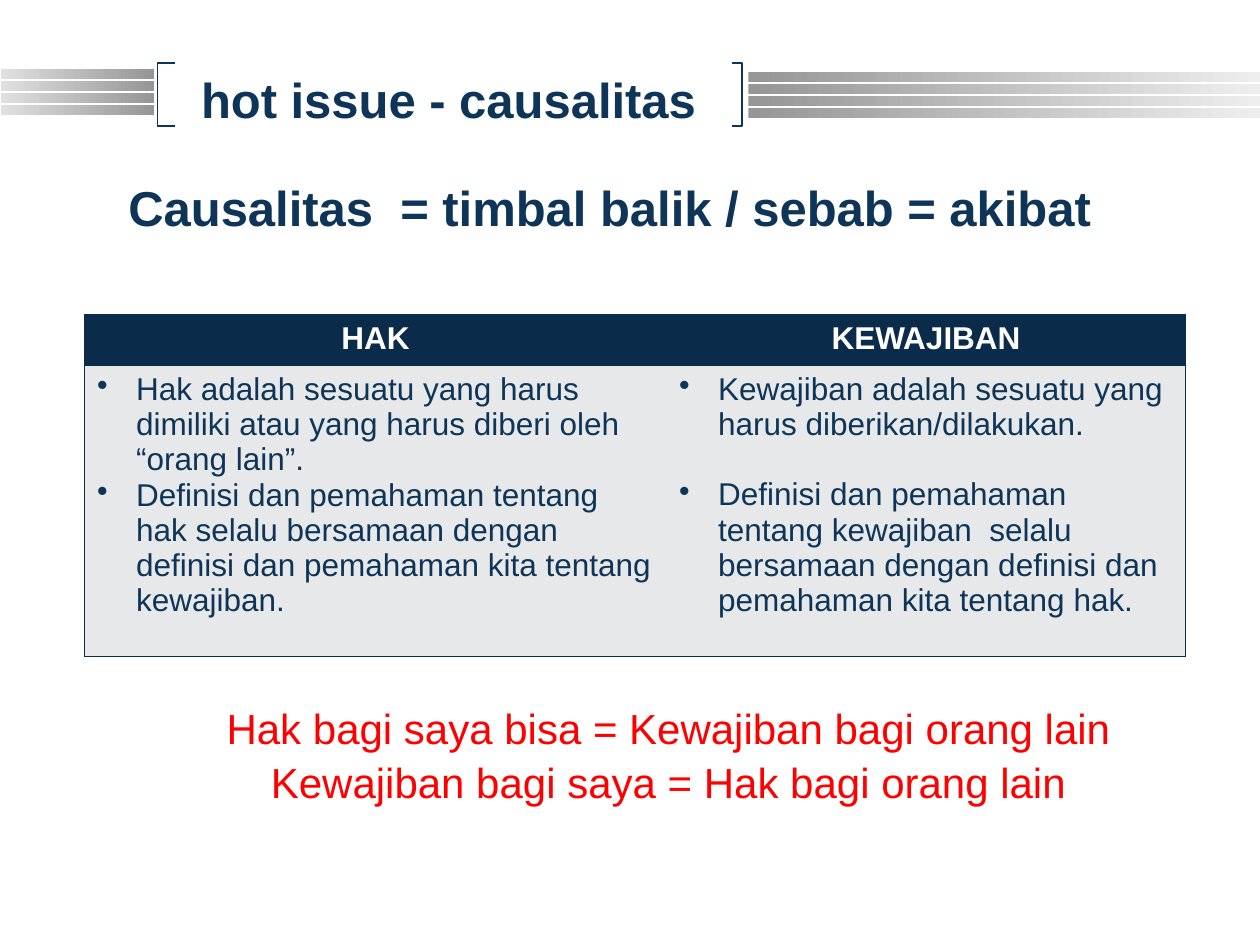
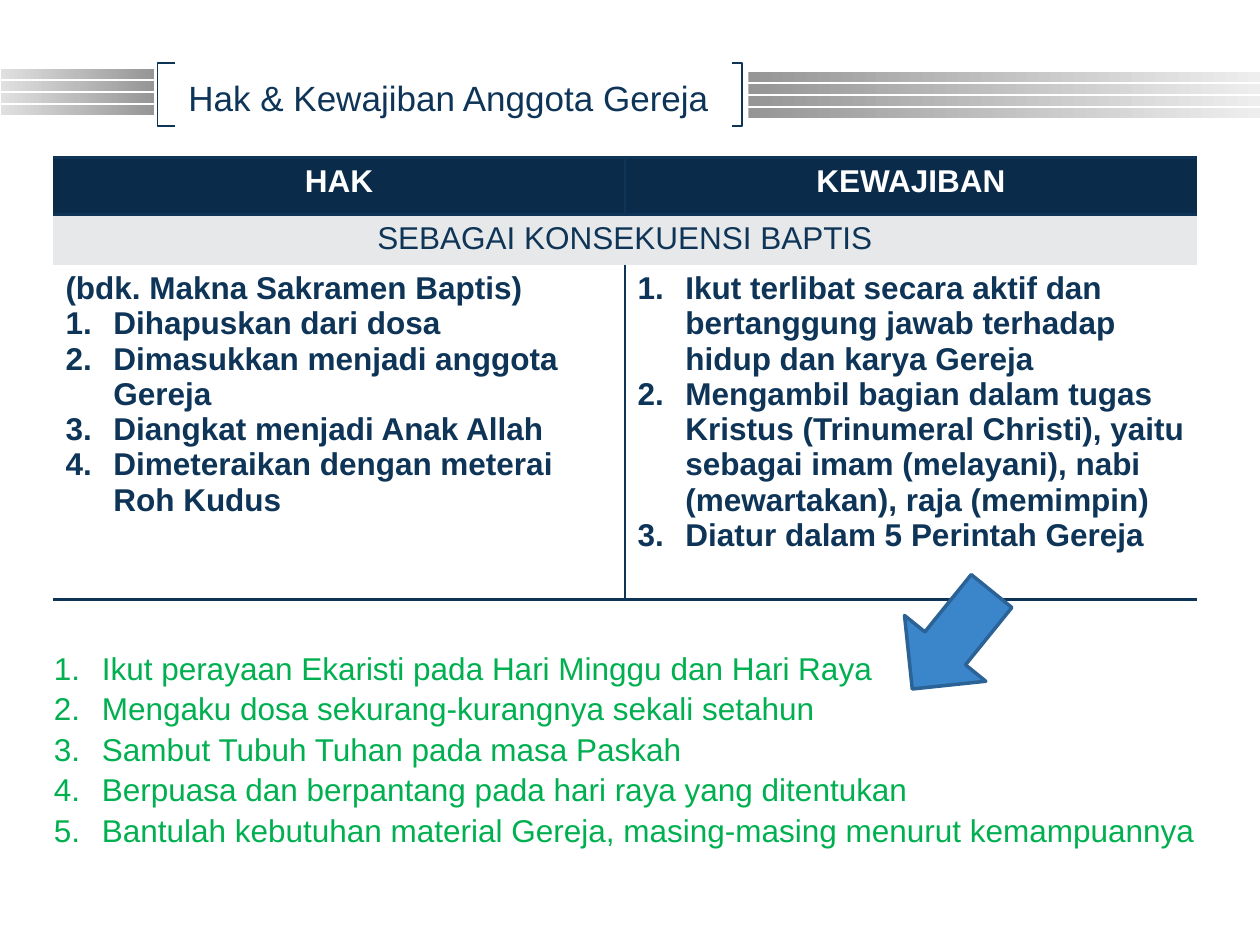
from dataclasses import dataclass

from lxml import etree
from pptx import Presentation
from pptx.dml.color import RGBColor
from pptx.enum.shapes import MSO_SHAPE
from pptx.enum.text import MSO_ANCHOR, PP_ALIGN
from pptx.oxml.ns import qn
from pptx.slide import Slide
from pptx.util import Inches, Pt

RECT, ARROW = MSO_SHAPE.RECTANGLE, MSO_SHAPE.DOWN_ARROW
LEFT, CENTER = PP_ALIGN.LEFT, PP_ALIGN.CENTER
TOP, MIDDLE = MSO_ANCHOR.TOP, MSO_ANCHOR.MIDDLE
NAVY, DARK, PALE, WHITE = "0E3558", "0A2C4A", "E7E8E9", "FFFFFF"
RED, GREEN, BLUE, EDGE = "FF0000", "00B050", "3B86CB", "2C6396"
SILVER, GREY, MIST = "E0E0E0", "969696", "EEEEEE"
DOT, NUMBER = "buChar", "buAutoNum"
MARKS = {DOT: ("char", "•", 0.31), NUMBER: ("type", "arabicPeriod", 0.38)}
LEADING = 1.07


@dataclass
class Band:
    """A stack of four fading stripes."""
    left: float
    top: float
    width: float
    start: str
    end: str


@dataclass
class Line:
    """One paragraph of text."""
    text: str
    mark: str = ""
    before: float = 0


@dataclass
class Style:
    """The look of a block of text."""
    size: float = 18
    color: str = NAVY
    bold: bool = False
    align: PP_ALIGN = LEFT
    leading: float = 1.0


@dataclass
class Cell:
    """One table cell with its drawn sides."""
    lines: list[Line]
    style: Style
    fill: str
    sides: str = ""


@dataclass
class Grid:
    """A table with its place and line widths."""
    left: float
    top: float
    cols: list[float]
    rows: list[float]
    edge: str
    widths: dict[str, float]
    cells: list[list[Cell]]


BANDS = [Band(0.01, 0.55, 1.21, SILVER, GREY), Band(5.94, 0.57, 4.06, GREY, MIST)]
BRACKETS = [(1.39, 1.25), (5.81, 5.89)]
HEAD = Style(color=WHITE, bold=True, align=CENTER)
BODY, STRONG = Style(), Style(bold=True)


def paint(hue: str) -> RGBColor:
    """Turn a hex string into a colour."""
    return RGBColor.from_string(hue)


def listed(mark: str, *texts: str) -> list[Line]:
    """Give every text the same list mark."""
    return [Line(text, mark) for text in texts]


def write(frame, lines: list[Line], style: Style) -> None:
    """Fill a text frame with styled paragraphs."""
    for index, line in enumerate(lines):
        para = frame.add_paragraph() if index else frame.paragraphs[0]
        if line.mark:
            key, value, indent = MARKS[line.mark]
            props = para._p.get_or_add_pPr()
            props.set("marL", str(Inches(indent)))
            props.set("indent", str(-Inches(indent)))
            etree.SubElement(props, qn(f"a:{line.mark}")).set(key, value)
        form = {"alignment": style.align, "line_spacing": style.leading,
                "space_before": Pt(line.before)}
        for name, value in form.items():
            setattr(para, name, value)
        run = para.add_run()
        run.text = line.text
        font = {"name": "Arial", "size": Pt(style.size), "bold": style.bold}
        for name, value in font.items():
            setattr(run.font, name, value)
        run.font.color.rgb = paint(style.color)


def add_text(slide: Slide, place: tuple[float, ...], lines: list[Line],
             style: Style, anchor: MSO_ANCHOR = TOP) -> None:
    """Add a wrapped text box."""
    frame = slide.shapes.add_textbox(*map(Inches, place)).text_frame
    frame.word_wrap = True
    frame.vertical_anchor = anchor
    write(frame, lines, style)


def add_band(slide: Slide, band: Band) -> None:
    """Draw the stripes of one band."""
    for row in range(4):
        top = band.top + row * 0.095
        bar = slide.shapes.add_shape(
            RECT, *map(Inches, (band.left, top, band.width, 0.08)))
        bar.shadow.inherit = False
        bar.line.fill.background()
        bar.fill.gradient()
        bar.fill.gradient_angle = 0
        for stop, hue in zip(bar.fill.gradient_stops, (band.start, band.end)):
            stop.color.rgb = paint(hue)


def add_bracket(slide: Slide, tip: float, spine: float) -> None:
    """Draw one square bracket beside the title."""
    path = [(Inches(x), Inches(y))
            for x, y in ((tip, 0.5), (spine, 0.5), (spine, 1), (tip, 1))]
    pen = slide.shapes.build_freeform(*path[0])
    pen.add_line_segments(path[1:], close=False)
    shape = pen.convert_to_shape()
    shape.shadow.inherit = False
    shape.fill.background()
    shape.line.color.rgb = paint(NAVY)
    shape.line.width = Pt(0.75)


def add_slide(deck, title: str, size: float, bold: bool = False) -> Slide:
    """Add a slide with bands, brackets and title."""
    slide = deck.slides.add_slide(deck.slide_layouts[6])
    for band in BANDS:
        add_band(slide, band)
    for tip, spine in BRACKETS:
        add_bracket(slide, tip, spine)
    style = Style(size, NAVY, bold, CENTER, LEADING)
    add_text(slide, (1.31, 0.5, 4.5, 0.53), [Line(title)], style, MIDDLE)
    return slide


def set_sides(cell, sides: str, grid: Grid) -> None:
    """Draw the named sides of a cell and clear the others."""
    props = cell._tc.get_or_add_tcPr()
    for index, side in enumerate("LRTB"):
        line = etree.Element(qn(f"a:ln{side}"))
        if side in sides:
            line.set("w", str(Pt(grid.widths[side])))
            fill = etree.SubElement(line, qn("a:solidFill"))
            etree.SubElement(fill, qn("a:srgbClr")).set("val", grid.edge)
        else:
            line.set("w", "0")
            etree.SubElement(line, qn("a:noFill"))
        props.insert(index, line)


def add_grid(slide: Slide, grid: Grid) -> None:
    """Add a table; a short row spans all columns."""
    place = (grid.left, grid.top, sum(grid.cols), sum(grid.rows))
    table = slide.shapes.add_table(
        len(grid.rows), len(grid.cols), *map(Inches, place)).table
    for col, width in zip(table.columns, grid.cols):
        col.width = Inches(width)
    for row, height in zip(table.rows, grid.rows):
        row.height = Inches(height)
    for r, cells in enumerate(grid.cells):
        if len(cells) < len(grid.cols):
            table.cell(r, 0).merge(table.cell(r, len(grid.cols) - 1))
        for c, item in enumerate(cells):
            cell = table.cell(r, c)
            cell.fill.solid()
            cell.fill.fore_color.rgb = paint(item.fill)
            set_sides(cell, item.sides, grid)
            write(cell.text_frame, item.lines, item.style)


def add_arrow(slide: Slide) -> None:
    """Add the turned arrow that leads to the list."""
    arrow = slide.shapes.add_shape(ARROW, *map(Inches, (7.14, 4.58, 0.83, 1)))
    arrow.rotation = 39
    arrow.shadow.inherit = False
    arrow.fill.solid()
    arrow.fill.fore_color.rgb = paint(BLUE)
    arrow.line.color.rgb = paint(EDGE)
    arrow.line.width = Pt(2)


def cause_slide(deck) -> None:
    """Build the slide on cause and effect."""
    slide = add_slide(deck, "hot issue - causalitas", 28, True)
    rights = listed(
        DOT,
        "Hak adalah sesuatu yang harus dimiliki atau yang harus diberi oleh “orang lain”.",
        "Definisi dan pemahaman tentang hak selalu bersamaan dengan definisi "
        "dan pemahaman kita tentang kewajiban.")
    duties = [
        Line("Kewajiban adalah sesuatu yang harus diberikan/dilakukan.", DOT),
        Line("Definisi dan pemahaman tentang kewajiban  selalu bersamaan dengan "
             "definisi dan pemahaman kita tentang hak.", DOT, 20)]
    add_grid(slide, Grid(
        0.67, 2.5, [4.62, 4.12], [0.39, 2.31], DARK, dict.fromkeys("LRTB", 1), [
            [Cell([Line("HAK")], HEAD, DARK, "LTB"),
             Cell([Line("KEWAJIBAN")], HEAD, DARK, "RTB")],
            [Cell(rights, BODY, PALE, "LTB"), Cell(duties, BODY, PALE, "RTB")]]))
    add_text(slide, (0.92, 1.33, 8.25, 0.57),
             [Line("Causalitas  = timbal balik / sebab = akibat")],
             Style(28, NAVY, True, LEFT, LEADING))
    add_text(slide, (0.92, 5.5, 8.77, 1.31),
             [Line("Hak bagi saya bisa = Kewajiban bagi orang lain"),
              Line("Kewajiban bagi saya = Hak bagi orang lain")],
             Style(24, RED, False, CENTER, LEADING))


def church_slide(deck) -> None:
    """Build the slide on church members."""
    slide = add_slide(deck, "Hak & Kewajiban Anggota Gereja", 20)
    rights = [Line("(bdk. Makna Sakramen Baptis)")] + listed(
        NUMBER, "Dihapuskan dari dosa", "Dimasukkan menjadi anggota Gereja",
        "Diangkat menjadi Anak Allah", "Dimeteraikan dengan meterai Roh Kudus")
    duties = listed(
        NUMBER,
        "Ikut terlibat secara aktif dan bertanggung jawab terhadap hidup dan karya Gereja",
        "Mengambil bagian dalam tugas Kristus (Trinumeral Christi), yaitu sebagai "
        "imam (melayani), nabi (mewartakan), raja (memimpin)",
        "Diatur dalam 5 Perintah Gereja")
    add_grid(slide, Grid(
        0.42, 1.25, [4.54, 4.54], [0.45, 0.4, 2.66], NAVY,
        {"L": 1, "R": 1, "T": 2, "B": 2}, [
            [Cell([Line("HAK")], HEAD, DARK, "RTB"),
             Cell([Line("KEWAJIBAN")], HEAD, DARK, "LTB")],
            [Cell([Line("SEBAGAI KONSEKUENSI BAPTIS")], Style(align=CENTER), PALE, "T")],
            [Cell(rights, STRONG, WHITE, "RB"), Cell(duties, STRONG, WHITE, "LB")]]))
    rules = listed(
        NUMBER, "Ikut perayaan Ekaristi pada Hari Minggu dan Hari Raya",
        "Mengaku dosa sekurang-kurangnya sekali setahun",
        "Sambut Tubuh Tuhan pada masa Paskah",
        "Berpuasa dan berpantang pada hari raya yang ditentukan",
        "Bantulah kebutuhan material Gereja, masing-masing menurut kemampuannya")
    add_text(slide, (0.33, 5.08, 9.42, 1.62), rules, Style(18, GREEN, leading=LEADING))
    add_arrow(slide)


def main() -> None:
    """Build and save the deck."""
    deck = Presentation()
    deck.slide_width, deck.slide_height = Inches(10), Inches(7.5)
    cause_slide(deck)
    church_slide(deck)
    deck.save("out.pptx")


if __name__ == "__main__":
    main()
